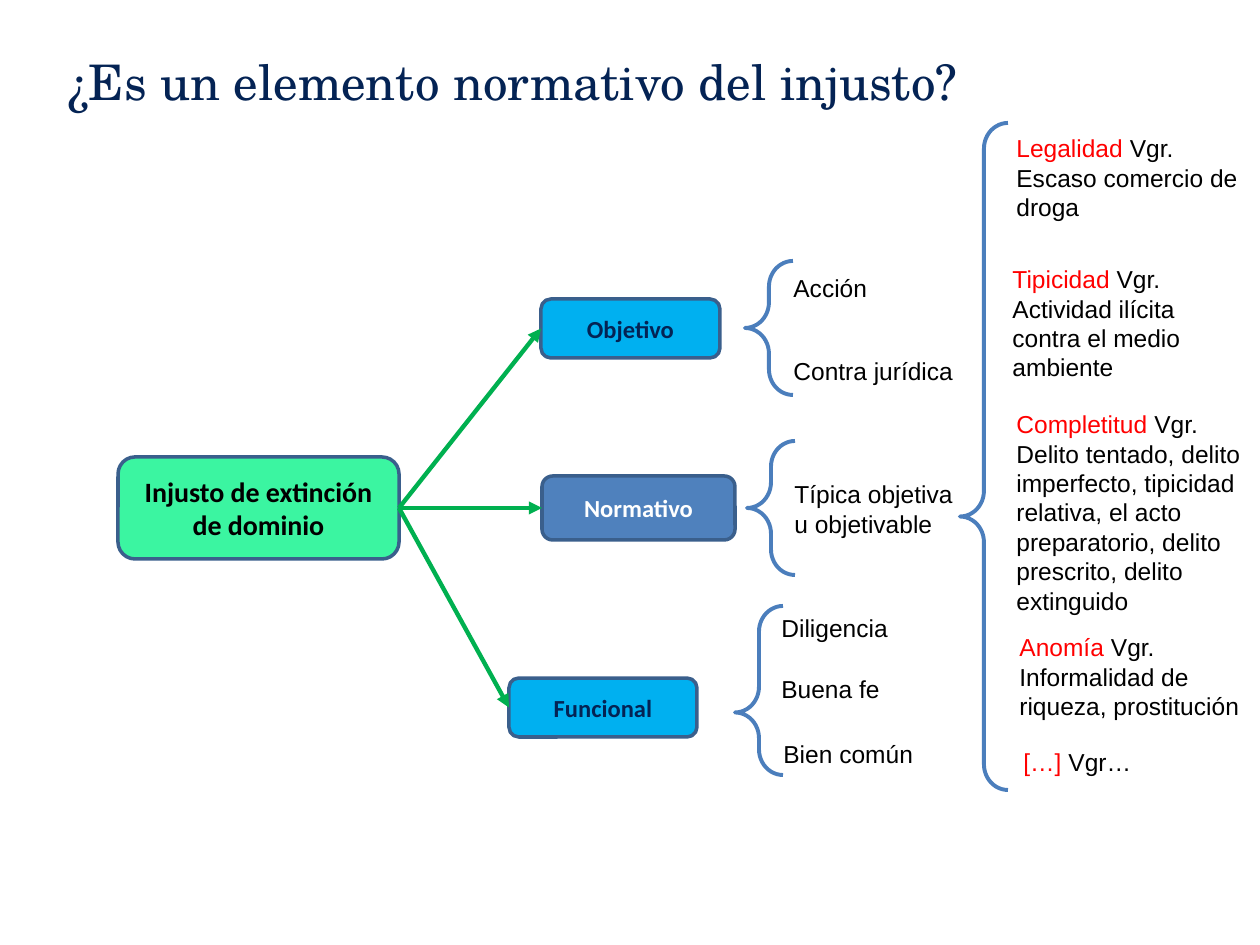
from typing import NamedTuple

from lxml import etree
from pptx import Presentation
from pptx.dml.color import RGBColor
from pptx.enum.shapes import MSO_CONNECTOR, MSO_SHAPE
from pptx.enum.text import MSO_ANCHOR, MSO_AUTO_SIZE, PP_ALIGN
from pptx.oxml.ns import qn
from pptx.util import Emu, Pt

ROUNDED, BRACE = MSO_SHAPE.ROUNDED_RECTANGLE, MSO_SHAPE.LEFT_BRACE
STRAIGHT = MSO_CONNECTOR.STRAIGHT
LEFT, CENTER = PP_ALIGN.LEFT, PP_ALIGN.CENTER
TOP, MIDDLE = MSO_ANCHOR.TOP, MSO_ANCHOR.MIDDLE
NO_FIT = MSO_AUTO_SIZE.NONE
LEFT_SIDE, RIGHT_SIDE = 1, 3

PX_PER_INCH = 126
NAVY, BLACK, WHITE, RED = "042354", "000000", "FFFFFF", "FF0000"
MINT, SKY, BLUE, GREEN = "3BF5A1", "00B0F0", "4F81BD", "00B050"
BOX_EDGE, BRACE_EDGE = "3A5F8C", "4B7EBC"


class Area(NamedTuple):
    left: int
    top: int
    width: int
    height: int


class Node(NamedTuple):
    text: str
    area: Area
    fill: str
    color: str
    size: int = 14


class Brace(NamedTuple):
    area: Area
    point: float


class Label(NamedTuple):
    text: str
    area: Area
    keyword: str = ""


ROOT = Node("Injusto de extinción de dominio", Area(118, 457, 281, 102), MINT, BLACK, 16)
BRANCHES = [
    Node("Objetivo", Area(541, 299, 179, 59), SKY, NAVY),
    Node("Normativo", Area(542, 476, 193, 64), BLUE, WHITE),
    Node("Funcional", Area(509, 678, 188, 59), SKY, NAVY),
]
BRACES = [
    Brace(Area(745, 261, 48, 134), 0.5),
    Brace(Area(747, 441, 48, 134), 0.5),
    Brace(Area(735, 606, 48, 169), 0.63),
    Brace(Area(960, 123, 48, 667), 0.59),
]
LABELS = [
    Label("Acción", Area(781, 267, 107, 43)),
    Label("Contra jurídica", Area(781, 350, 210, 43)),
    Label("Típica objetiva u objetivable", Area(782, 473, 195, 72)),
    Label("Diligencia", Area(769, 607, 132, 43)),
    Label("Buena fe", Area(769, 668, 152, 43)),
    Label("Bien común", Area(771, 733, 158, 43)),
    Label("Vgr. Escaso comercio de droga", Area(1004, 127, 260, 102), "Legalidad "),
    Label("Vgr. Actividad ilícita contra el medio ambiente",
          Area(1000, 258, 260, 131), "Tipicidad "),
    Label("Vgr. Delito tentado, delito imperfecto, tipicidad relativa, el acto "
          "preparatorio, delito prescrito, delito extinguido",
          Area(1004, 403, 260, 221), "Completitud "),
    Label("Vgr. Informalidad de riqueza, prostitución",
          Area(1007, 626, 260, 102), "Anomía "),
    Label("Vgr…", Area(1011, 741, 260, 43), "[…] "),
]


def px(length: int) -> Emu:
    return Emu(round(length * 914400 / PX_PER_INCH))


def place(area: Area) -> list[Emu]:
    return [px(length) for length in area]


def rgb(color: str) -> RGBColor:
    return RGBColor.from_string(color)


def add_span(para, text: str, *, size: int = 14, font: str = "Arial",
             color: str = BLACK, bold: bool = False) -> None:
    span = para.add_run()
    span.text = text
    span.font.size = Pt(size)
    span.font.name = font
    span.font.bold = bold
    span.font.color.rgb = rgb(color)


def set_line(line, color: str, width: float) -> None:
    line.color.rgb = rgb(color)
    line.width = Pt(width)


def set_title(page, text: str, area: Area) -> None:
    title = page.shapes.title
    title.left, title.top, title.width, title.height = place(area)
    frame = title.text_frame
    frame.auto_size = NO_FIT
    frame.word_wrap = True
    frame.vertical_anchor = TOP
    frame.margin_left = frame.margin_right = px(13)
    frame.margin_top = frame.margin_bottom = px(13)
    para = frame.paragraphs[0]
    para.alignment = LEFT
    add_span(para, text, size=28, font="TeX Gyre Schola", color=NAVY)


def add_node(page, node: Node):
    box = page.shapes.add_shape(ROUNDED, *place(node.area))
    box.shadow.inherit = False
    box.fill.solid()
    box.fill.fore_color.rgb = rgb(node.fill)
    set_line(box.line, BOX_EDGE, 2)
    frame = box.text_frame
    frame.word_wrap = True
    frame.vertical_anchor = MIDDLE
    para = frame.paragraphs[0]
    para.alignment = CENTER
    add_span(para, node.text, size=node.size, font="Calibri", color=node.color, bold=True)
    return box


def add_arrow(page, start, end) -> None:
    arrow = page.shapes.add_connector(STRAIGHT, 0, 0, 0, 0)
    arrow.begin_connect(start, RIGHT_SIDE)
    arrow.end_connect(end, LEFT_SIDE)
    set_line(arrow.line, GREEN, 2.5)
    properties = arrow.element.spPr
    etree.SubElement(properties.find(qn("a:ln")), qn("a:tailEnd"), type="triangle")
    etree.SubElement(properties, qn("a:effectLst"))


def add_brace(page, brace: Brace) -> None:
    shape = page.shapes.add_shape(BRACE, *place(brace.area))
    shape.shadow.inherit = False
    shape.fill.background()
    shape.adjustments[0] = 0.535
    shape.adjustments[1] = brace.point
    set_line(shape.line, BRACE_EDGE, 2.25)


def add_label(page, label: Label) -> None:
    box = page.shapes.add_textbox(*place(label.area))
    box.text_frame.word_wrap = True
    para = box.text_frame.paragraphs[0]
    if label.keyword:
        add_span(para, label.keyword, color=RED)
    add_span(para, label.text)


def main() -> None:
    deck = Presentation()
    deck.slide_width, deck.slide_height = px(1260), px(945)
    page = deck.slides.add_slide(deck.slide_layouts[5])
    set_title(page, "¿Es un elemento normativo del injusto?", Area(54, 39, 1121, 84))

    # Root and its three branches
    root = add_node(page, ROOT)
    for branch in BRANCHES:
        add_arrow(page, root, add_node(page, branch))

    # Braces and the elements they group
    for brace in BRACES:
        add_brace(page, brace)
    for label in LABELS:
        add_label(page, label)

    deck.save("out.pptx")


if __name__ == "__main__":
    main()
